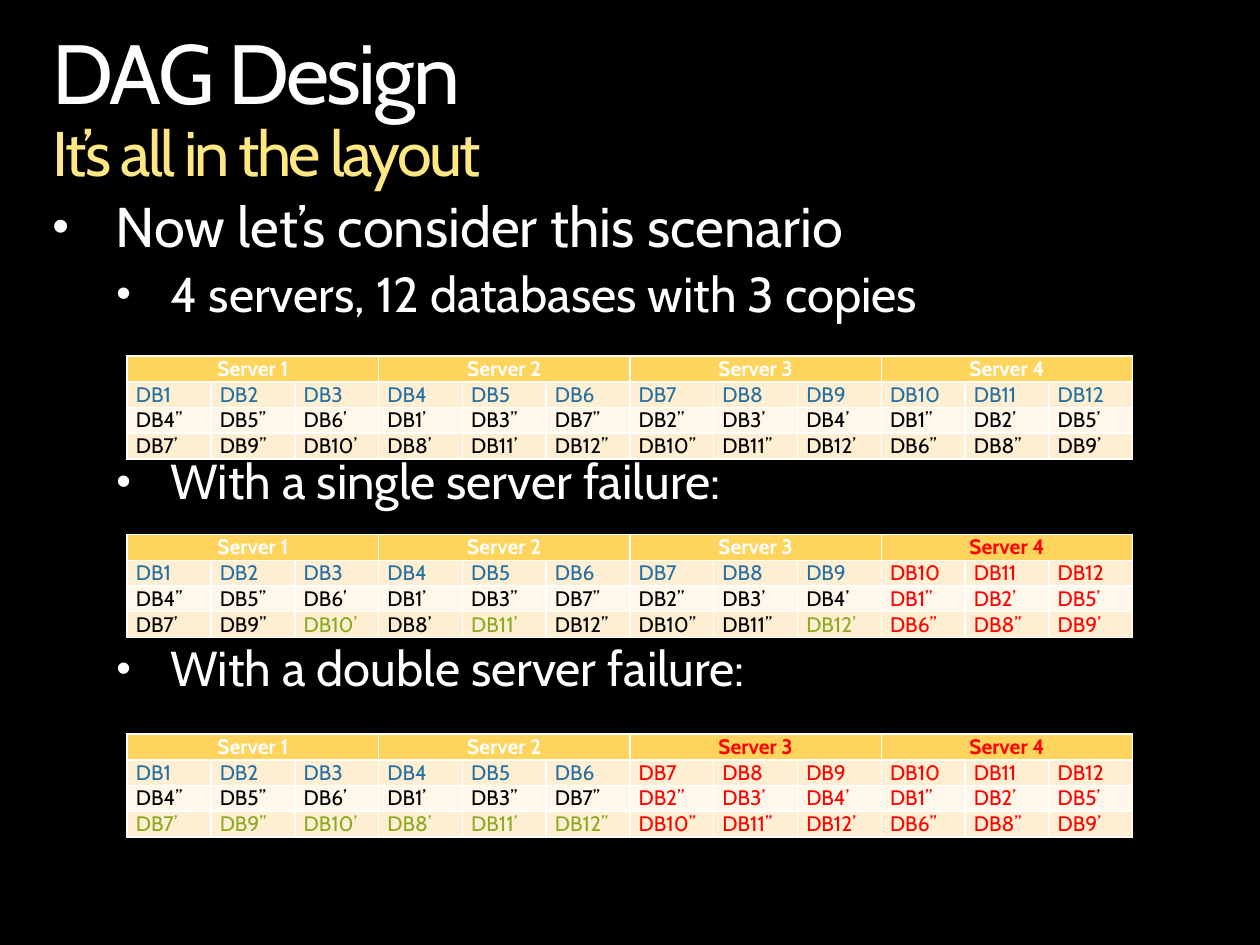
"""Build the DAG Design slide: three database layout tables under failure scenarios."""
import lxml.etree
import pptx
import pptx.dml.color
import pptx.enum.text
import pptx.oxml.ns
import pptx.util

Pt = pptx.util.Pt
RGBColor = pptx.dml.color.RGBColor
ANCHOR = pptx.enum.text.MSO_ANCHOR
ALIGN = pptx.enum.text.PP_ALIGN

BLACK = RGBColor(0x00, 0x00, 0x00)
WHITE = RGBColor(0xFF, 0xFF, 0xFF)
YELLOW = RGBColor(0xFF, 0xE7, 0x84)
ACTIVE_BLUE = RGBColor(0x25, 0x70, 0xA3)
FAILED_RED = RGBColor(0xFF, 0x00, 0x00)
ACTIVATED_GREEN = RGBColor(0x8C, 0xA9, 0x23)
HEADER_FILL = RGBColor(0xFE, 0xD4, 0x5C)
DARK_BAND = RGBColor(0xFF, 0xEF, 0xD2)
LIGHT_BAND = RGBColor(0xFF, 0xF7, 0xEA)

BULLETS = [
    ("Now let’s consider this scenario", 0, 32, 36, -36, 0),
    ("4 servers, 12 databases with 3 copies", 1, 28, 67.5, -31, 5.6),
    ("With a single server failure:", 1, 28, 67.5, -31, 76.8),
    ("With a double server failure:", 1, 28, 67.5, -31, 76.8),
]
DATABASE_ROWS = [
    "DB1 DB2 DB3 DB4 DB5 DB6 DB7 DB8 DB9 DB10 DB11 DB12".split(),
    "DB4’’ DB5’’ DB6’ DB1’ DB3’’ DB7’’ DB2’’ DB3’ DB4’ DB1’’ DB2’ DB5’".split(),
    "DB7’ DB9’’ DB10’ DB8’ DB11’ DB12’’ DB10’’ DB11’’ DB12’ DB6’’ DB8’’ DB9’".split(),
]
SCENARIOS = [
    (203.5, 4, ()),
    (305.5, 3, (2, 4, 8)),
    (419.5, 2, range(6)),
]
DATABASES_PER_SERVER = 3
COLUMN_WIDTH = 47.88
ROW_HEIGHT = 14.6


def add_text(para, text, size, color, bold=False, spacing=None):
    span = para.add_run()
    span.text = text
    span.font.name = "Cabin"
    span.font.size = Pt(size)
    span.font.bold = bold
    span.font.color.rgb = color
    if spacing is not None:
        span.font._element.set("spc", str(spacing))


def place_frame(box, left, top, width, height):
    box.left, box.top, box.width, box.height = Pt(left), Pt(top), Pt(width), Pt(height)
    frame = box.text_frame
    frame.margin_left = frame.margin_top = frame.margin_right = frame.margin_bottom = 0
    frame.vertical_anchor = ANCHOR.TOP
    frame.auto_size = pptx.enum.text.MSO_AUTO_SIZE.NONE
    frame.word_wrap = True
    return frame


deck = pptx.Presentation()
deck.slide_width, deck.slide_height = Pt(720), Pt(540)
page = deck.slides.add_slide(deck.slide_layouts[1])
page.background.fill.solid()
page.background.fill.fore_color.rgb = BLACK

title = place_frame(page.shapes.title, 30, 18, 660, 91.4)
para = title.paragraphs[0]
para.alignment = ALIGN.LEFT
para.line_spacing = 0.9
add_text(para, "DAG Design", 48, WHITE, spacing=-150)
para.add_line_break()
add_text(para, "It’s all in the layout", 36, YELLOW, spacing=-150)

body = place_frame(page.placeholders[1], 30, 114, 660, 333)
for number, (text, level, size, margin, indent, space) in enumerate(BULLETS):
    para = body.add_paragraph() if number else body.paragraphs[0]
    para.level = level
    para.line_spacing = 0.9
    para.space_before = Pt(space)
    properties = para._p.get_or_add_pPr()
    properties.set("marL", str(Pt(margin)))
    properties.set("indent", str(Pt(indent)))
    for tag, name, value in (
        ("a:buSzPct", "val", "85000"),
        ("a:buFont", "typeface", "Arial"),
        ("a:buChar", "char", "•"),
    ):
        lxml.etree.SubElement(properties, pptx.oxml.ns.qn(tag)).set(name, value)
    add_text(para, text, size, WHITE)

column_count = len(DATABASE_ROWS[0])
row_count = len(DATABASE_ROWS) + 1
for top, working_servers, activated_columns in SCENARIOS:
    table = page.shapes.add_table(
        row_count, column_count, Pt(72.7), Pt(top),
        Pt(COLUMN_WIDTH * column_count), Pt(ROW_HEIGHT * row_count),
    ).table
    for column in table.columns:
        column.width = Pt(COLUMN_WIDTH)
    for row in table.rows:
        row.height = Pt(ROW_HEIGHT)
    for row in range(row_count):
        for column in range(column_count):
            cell = table.cell(row, column)
            cell.margin_left = cell.margin_right = Pt(5)
            cell.margin_top = cell.margin_bottom = 0
            cell.fill.solid()
            cell.fill.fore_color.rgb = (HEADER_FILL, DARK_BAND, LIGHT_BAND, DARK_BAND)[row]
            server, position = divmod(column, DATABASES_PER_SERVER)
            color = (WHITE, ACTIVE_BLUE, BLACK, BLACK)[row]
            if server >= working_servers:
                color = FAILED_RED
            elif row == row_count - 1 and column in activated_columns:
                color = ACTIVATED_GREEN
            para = cell.text_frame.paragraphs[0]
            if row:
                add_text(para, DATABASE_ROWS[row - 1][column], 12, color)
            elif position == 0:
                cell.merge(table.cell(0, column + DATABASES_PER_SERVER - 1))
                para.alignment = ALIGN.CENTER
                add_text(para, f"Server {server + 1}", 12, color, bold=True)

deck.save("out.pptx")
